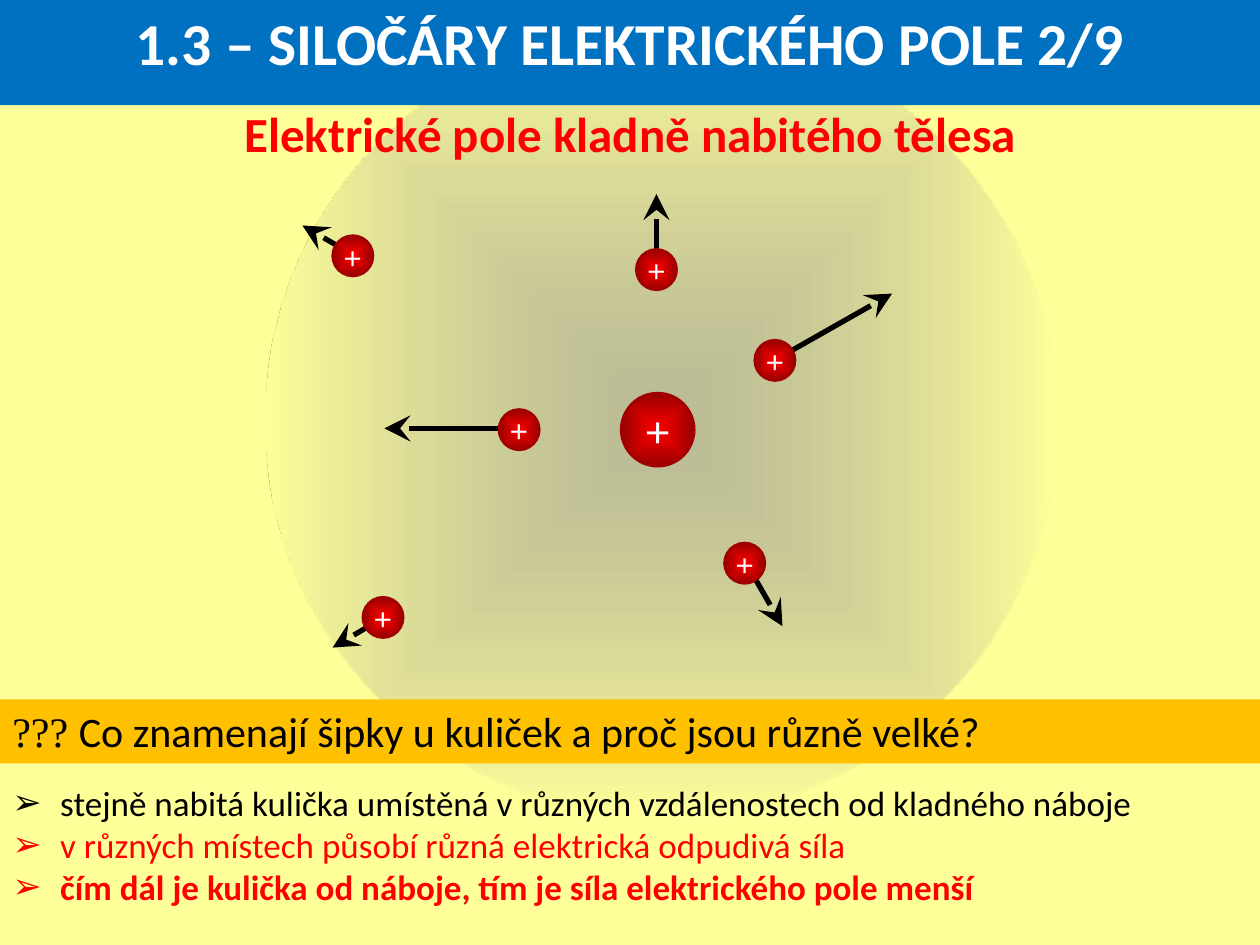
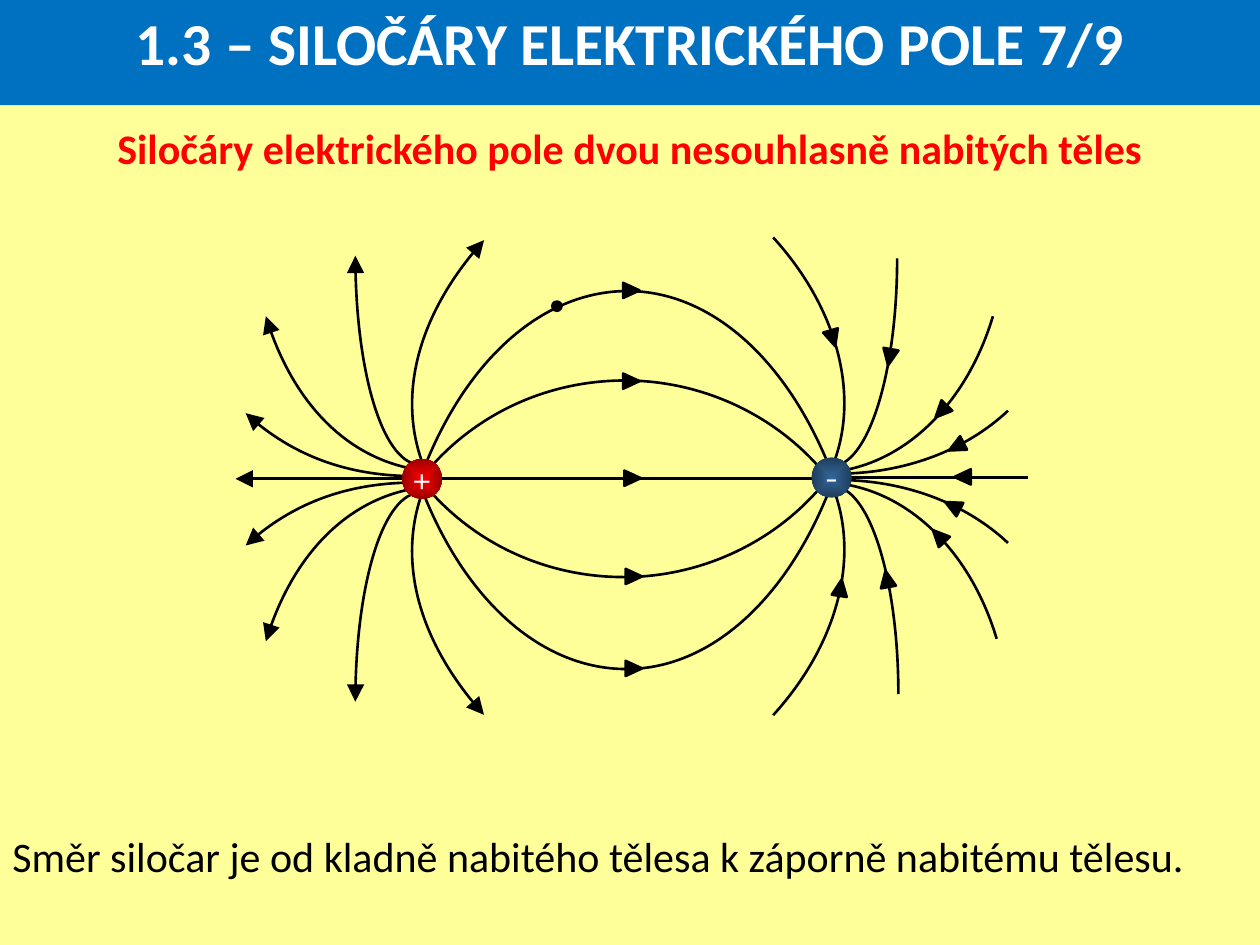
from copy import deepcopy
from dataclasses import dataclass
from math import cos, radians, sin

from pptx import Presentation
from pptx import util as u
from pptx.dml.color import RGBColor
from pptx.enum import shapes, text
from pptx.oxml import parse_xml
from pptx.oxml.ns import nsdecls

BLACK, WHITE, RED = "000000", "FFFFFF", "FF0000"
PAPER, BLUE, AMBER = "FFFF99", "0070C0", "FFC000"
POSITIVE, NEGATIVE = (RED, "980000"), ("336699", "1E3D5B")
BALL_EDGE = "A00000"
BODY_FONT, SIGN_FONT = "Calibri", "Montserrat"
BALL = 0.32


@dataclass
class FieldLine:
    controls: list
    corner: tuple
    mirror: float
    shift: float = 0
    angle: float = 0
    pivot: tuple = (0, 0)

    def reflected(self):
        def flip(point):
            return point[0] + self.shift, self.mirror - point[1]
        return FieldLine([flip(point) for point in self.controls], flip(self.corner),
                         self.mirror, self.shift, -self.angle % 360, flip(self.pivot))

    def unrotated(self):
        turn = radians(-self.angle)
        left, top = self.pivot
        return [(left + (x - left) * cos(turn) - (y - top) * sin(turn),
                 top + (x - left) * sin(turn) + (y - top) * cos(turn))
                for x, y in (*self.controls, self.corner)]


FORCES = [
    ((5.99, 2.7), (6.27, 2.79), (7.08, 2.33)),
    ((2.64, 1.87), (2.66, 1.94), (2.4, 1.79)),
    ((3.96, 3.25), (3.96, 3.4), (3.05, 3.4)),
    ((5.75, 4.31), (5.98, 4.57), (6.21, 4.97)),
    ((5.05, 1.98), (5.21, 2), (5.21, 1.54)),
    ((2.88, 4.74), (2.91, 4.98), (2.64, 5.14)),
]
OUTGOING = [
    FieldLine([(3.3, 3.78), (2.78, 3.78), (2.29, 3.6), (1.95, 3.28)], (3.3, 2.25), 7.61),
    FieldLine([(3.33, 3.73), (2.78, 3.65), (2.31, 3.18), (2.11, 2.51)], (3.5, 1.82), 7.6),
    FieldLine([(3.34, 3.69), (3.05, 3.69), (2.82, 2.95), (2.82, 2.03)], (3.34, 2.03), 7.6),
    FieldLine([(3.37, 3.74), (3.13, 3.18), (3.31, 2.47), (3.83, 1.9)], (5.26, 2.79), 7.58,
              angle=58.6, pivot=(3.98, 2.69)),
]
BETWEEN = [
    FieldLine([(6.57, 3.79), (6.18, 3.3), (5.58, 3.02), (4.96, 3.02),
               (4.35, 3.02), (3.78, 3.28), (3.39, 3.74)], (4.96, 5.06), 7.6, -0.01),
    FieldLine([(6.6, 3.75), (6.25, 2.85), (5.64, 2.31), (4.98, 2.31),
               (4.33, 2.31), (3.73, 2.82), (3.38, 3.68)], (4.98, 5.32), 7.62, -0.01),
]
INCOMING = [
    FieldLine([(6.65, 3.74), (7.21, 3.66), (7.68, 3.18), (7.88, 2.51)], (6.49, 1.82), 7.58, 0.03),
    FieldLine([(6.6, 3.7), (6.89, 3.7), (7.12, 2.96), (7.12, 2.05)], (6.6, 2.05), 7.56, 0.01),
    FieldLine([(6.59, 3.73), (6.83, 3.17), (6.65, 2.46), (6.13, 1.89)], (4.7, 2.78), 7.56,
              angle=301.4, pivot=(6, 2.69)),
    FieldLine([(6.65, 3.76), (7.17, 3.76), (7.66, 3.58), (8, 3.26)], (6.65, 2.23), 7.57),
]
DIRECTION_MARKS = [
    (4.95, 2.24, 90), (4.95, 2.96, 90), (4.96, 3.73, 90),
    (4.97, 4.51, 90), (4.97, 5.24, 90), (7.58, 3.72, 270),
    (7.53, 3.48, 242.6), (7.5, 3.95, 297.4), (7.39, 4.19, 316.2),
    (7.41, 3.2, 223.8), (7, 2.77, 190.2), (6.98, 4.53, 349.8),
    (6.55, 2.62, 163.5), (6.61, 4.6, 8.6),
]


def rgb(value):
    return RGBColor.from_string(value)


def style_font(span, size, color=BLACK, bold=False, font=BODY_FONT):
    span.font.size = u.Pt(size)
    span.font.name = font
    span.font.bold = bold
    span.font.color.rgb = rgb(color)


def set_frame(box, margins=(0.1, 0.05, 0.1, 0.05)):
    frame = box.text_frame
    frame.margin_left, frame.margin_top, frame.margin_right, frame.margin_bottom = map(u.Inches, margins)
    frame.vertical_anchor = text.MSO_ANCHOR.TOP
    frame.word_wrap = True
    frame.auto_size = text.MSO_AUTO_SIZE.SHAPE_TO_FIT_TEXT
    return frame


def set_line(item, color, width, head=None):
    item.line.color.rgb = rgb(color)
    item.line.width = u.Pt(width)
    if head:
        item.element.spPr.find("{*}ln").append(
            parse_xml(f'<a:tailEnd {nsdecls("a")} type="{head}" w="lg" len="lg"/>'))


def add_figure(page, preset, left, top, width, height, fill=None, edge=None, edge_width=1.5):
    figure = page.shapes.add_shape(preset, *map(u.Inches, (left, top, width, height)))
    figure.shadow.inherit = False
    if fill:
        figure.fill.solid()
        figure.fill.fore_color.rgb = rgb(fill)
    if edge:
        set_line(figure, edge, edge_width)
    else:
        figure.line.fill.background()
    return figure


def set_glow(figure, inner, outer, opacity=100):
    figure.fill.background()
    properties = figure.element.spPr
    gradient = parse_xml(
        f'<a:gradFill {nsdecls("a")} rotWithShape="1"><a:gsLst>'
        f'<a:gs pos="0"><a:srgbClr val="{inner}"><a:alpha val="{opacity * 1000}"/></a:srgbClr></a:gs>'
        f'<a:gs pos="100000"><a:srgbClr val="{outer}"/></a:gs></a:gsLst>'
        '<a:path path="shape"><a:fillToRect l="50000" t="50000" r="50000" b="50000"/></a:path>'
        '</a:gradFill>')
    properties.replace(properties.find("{*}noFill"), gradient)


def add_ball(page, left, top, sign="+", colors=POSITIVE, diameter=BALL, size=20,
             edge=None, bottom=0.04):
    ball = add_figure(page, shapes.MSO_SHAPE.OVAL, left, top, diameter, diameter, edge=edge)
    set_glow(ball, *colors)
    frame = set_frame(ball, (0.1, 0.06, 0.1, bottom))
    frame.vertical_anchor = text.MSO_ANCHOR.MIDDLE
    frame.word_wrap = False
    frame.auto_size = text.MSO_AUTO_SIZE.NONE
    frame.text = sign
    para = frame.paragraphs[0]
    para.alignment = text.PP_ALIGN.CENTER
    style_font(para.runs[0], size, WHITE, font=SIGN_FONT)


def add_straight(page, start, end, width, head=None):
    line = page.shapes.add_connector(shapes.MSO_CONNECTOR.STRAIGHT, *map(u.Inches, (*start, *end)))
    set_line(line, BLACK, width, head)
    line.element.spPr.append(parse_xml(f'<a:effectLst {nsdecls("a")}/>'))


def bend_outline(curve):
    sector = curve.element.spPr.find(".//{*}pathLst")[0]
    *bends, corner = sector.findall("{*}lnTo")
    for first in range(0, len(bends), 3):
        bezier = parse_xml(f'<a:cubicBezTo {nsdecls("a")}/>')
        bends[first].addprevious(bezier)
        for segment in bends[first:first + 3]:
            bezier.append(segment[0])
            sector.remove(segment)
    stroke = deepcopy(sector)
    stroke.remove(stroke.find("{*}lnTo"))
    stroke.remove(stroke.find("{*}close"))
    stroke.set("fill", "none")
    sector.set("stroke", "0")
    sector.addprevious(stroke)


def add_curve(page, field_line, head=None):
    start, *points = [tuple(map(u.Inches, point)) for point in field_line.unrotated()]
    builder = page.shapes.build_freeform(*start, scale=1.0)
    builder.add_line_segments(points, close=True)
    curve = builder.convert_to_shape()
    bend_outline(curve)
    curve.rotation = field_line.angle
    curve.shadow.inherit = False
    curve.fill.background()
    set_line(curve, BLACK, 1.5, head)


def add_curve_pairs(page, field_lines, head=None):
    for field_line in field_lines:
        add_curve(page, field_line, head)
        add_curve(page, field_line.reflected(), head)


def add_text(page, top, height, lines, size, align=text.PP_ALIGN.LEFT, bottom=0.05, bullet=None):
    box = page.shapes.add_textbox(0, u.Inches(top), u.Inches(10), u.Inches(height))
    frame = set_frame(box, (0.1, 0.05, 0.1, bottom))
    frame.text = "\n".join(words for words, color, bold in lines)
    for para, (words, color, bold) in zip(frame.paragraphs, lines):
        para.alignment = align
        style_font(para.runs[0], size, color, bold)
        if bullet:
            properties = para._p.get_or_add_pPr()
            properties.set("marL", str(u.Inches(0.38)))
            properties.set("indent", str(-u.Inches(0.38)))
            properties.append(parse_xml(f'<a:buFont {nsdecls("a")} typeface="{BODY_FONT}"/>'))
            properties.append(parse_xml(f'<a:buChar {nsdecls("a")} char="{bullet}"/>'))


def add_subtitle(page, top, height, words, size):
    add_text(page, top, height, [(words, RED, True)], size, text.PP_ALIGN.CENTER)


def add_question(page, words):
    banner = add_figure(page, shapes.MSO_SHAPE.RECTANGLE, 0, 5.55, 10, 0.51, AMBER)
    para = set_frame(banner).paragraphs[0]
    para.alignment = text.PP_ALIGN.LEFT
    for part, font in (("??? ", "Times New Roman"), (words, BODY_FONT)):
        span = para.add_run()
        span.text = part
        style_font(span, 24, font=font)


def add_title(page, part):
    title = page.shapes.title
    title.left, title.top, title.width, title.height = map(u.Inches, (0, 0, 10, 0.67))
    title.fill.solid()
    title.fill.fore_color.rgb = rgb(BLUE)
    frame = set_frame(title)
    frame.text = f"1.3 – SILOČÁRY ELEKTRICKÉHO POLE {part}/9"
    para = frame.paragraphs[0]
    para.alignment = text.PP_ALIGN.CENTER
    style_font(para.runs[0], 34, WHITE, True)
    title.element.getparent().append(title.element)


def build_force_page(page):
    field = add_figure(page, shapes.MSO_SHAPE.OVAL, 2.11, 0.2, 6.28, 6.28)
    set_glow(field, "969696", PAPER, 65)
    for corner, start, tip in FORCES:
        add_straight(page, start, tip, 3, "stealth")
        add_ball(page, *corner, edge=BALL_EDGE)
    add_ball(page, 4.93, 3.12, diameter=0.58, size=28, edge=BALL_EDGE)
    add_subtitle(page, 0.77, 0.57, "Elektrické pole kladně nabitého tělesa", 28)
    add_text(page, 6.15, 1.11, [
        ("stejně nabitá kulička umístěná v různých vzdálenostech od kladného náboje", BLACK, False),
        ("v různých místech působí různá elektrická odpudivá síla", RED, False),
        ("čím dál je kulička od náboje, tím je síla elektrického pole menší", RED, True),
    ], 20, bullet="➢")
    add_title(page, 2)
    add_question(page, "Co znamenají šipky u kuliček a proč jsou různě velké?")


def build_field_lines_page(page):
    add_straight(page, (3.51, 3.8), (6.45, 3.8), 1.5)
    add_straight(page, (6.74, 3.79), (8.16, 3.79), 1.5)
    add_straight(page, (3.19, 3.8), (1.87, 3.8), 1.5, "triangle")
    add_curve_pairs(page, OUTGOING, "triangle")
    add_curve_pairs(page, BETWEEN)
    add_curve_pairs(page, INCOMING)
    for left, top, angle in DIRECTION_MARKS:
        mark = add_figure(page, shapes.MSO_SHAPE.ISOSCELES_TRIANGLE, left, top, 0.12, 0.13, BLACK, BLACK)
        mark.rotation = angle
    add_subtitle(page, 0.92, 0.51, "Siločáry elektrického pole dvou nesouhlasně nabitých těles", 24)
    add_text(page, 6.54, 0.47, [
        ("Směr siločar je od kladně nabitého tělesa k záporně nabitému tělesu.", BLACK, False),
    ], 24, bottom=0.01)
    add_ball(page, 3.19, 3.64)
    add_ball(page, 6.44, 3.63, "-", NEGATIVE, bottom=0.08)
    add_figure(page, shapes.MSO_SHAPE.OVAL, 4.38, 2.39, 0.08, 0.08, BLACK, BLACK, 1)
    add_title(page, 7)


def main():
    deck = Presentation()
    deck.slide_width, deck.slide_height = u.Inches(10), u.Inches(7.5)
    background = deck.slide_master.background.fill
    background.solid()
    background.fore_color.rgb = rgb(PAPER)
    title_only = deck.slide_layouts.get_by_name("Title Only")
    for build in (build_force_page, build_field_lines_page):
        build(deck.slides.add_slide(title_only))
    deck.save("out.pptx")


if __name__ == "__main__":
    main()
